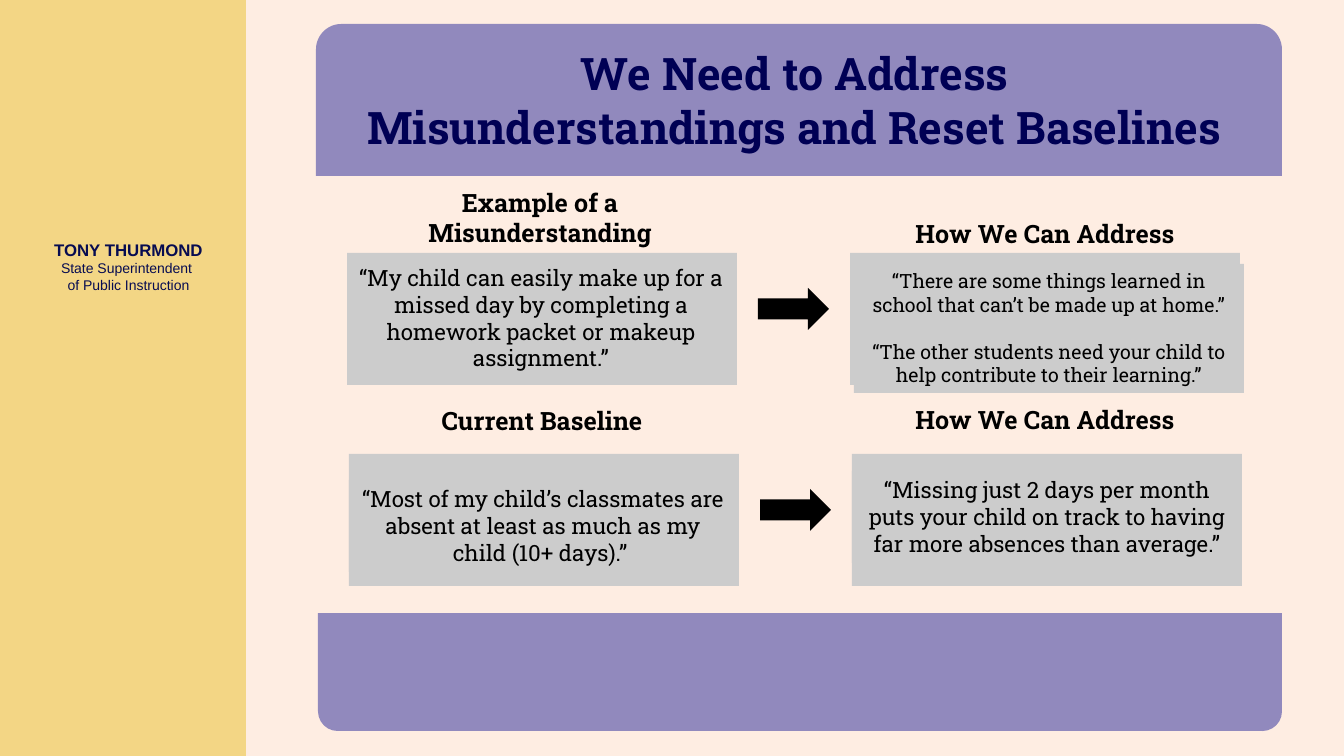
from lxml import etree
from pptx import Presentation, util as u
from pptx.dml.color import RGBColor
from pptx.enum import shapes, text
from pptx.oxml.ns import qn

# Content: lengths in px, boxes as left, top, width, height
WIDTH, HEIGHT = 1344, 756
COLORS = {"page": "FEEDE2", "sidebar": "F3D685", "band": "262699", "panel": "CCCCCC",
          "black": "000000", "title": "000054", "official": "070C51"}
SLAB = "Roboto Slab"
TITLE = ["We Need to Address ", "Misunderstandings and Reset Baselines "]
OFFICIAL = ["TONY THURMOND\vState Superintendent \vof Public Instruction"]
PANEL_W, PANEL_H = 390, 132
# heading, heading box, panel corner, quote box, quote size, quotes
CARDS = [
    ("Example of a Misunderstanding", (345, 182, 390, 72), (347, 253), (347, 259, 388, 119), 16,
     ["“My child can easily make up for a missed day by completing a homework packet "
      "or makeup assignment.”"]),
    ("How We Can Address", (850, 213, 390, 40), (850, 253), (854, 264, 390, 129), 14,
     ["“There are some things learned in school that can’t be made up at home.”",
      "“The other students need your child to help contribute to their learning.”"]),
    ("Current Baseline", (347, 400, 390, 40), (349, 454), (349, 480, 388, 92), 16,
     ["“Most of my child’s classmates are absent at least as much as my child (10+ days).” "]),
    ("How We Can Address", (850, 399, 390, 40), (852, 454), (852, 471, 390, 92), 16,
     ["“Missing just 2 days per month puts your child on track to having far more "
      "absences than average.”"]),
]
ARROWS = [(758, 288, 71, 42), (760, 489, 71, 42)]

prs = Presentation()
SCALE = u.Inches(1) / 100.8


def px(*lengths):
    return [round(length * SCALE) for length in lengths]


prs.slide_width, prs.slide_height = px(WIDTH, HEIGHT)
slide = prs.slides.add_slide(prs.slide_layouts[6])


def add_block(kind, box, color, opacity=None):
    block = slide.shapes.add_shape(kind, *px(*box))
    block.shadow.inherit = False
    block.fill.solid()
    block.fill.fore_color.rgb = RGBColor.from_string(COLORS[color])
    block.line.fill.background()
    if opacity:
        tint = block.fill._xPr.find(".//" + qn("a:srgbClr"))
        etree.SubElement(tint, qn("a:alpha")).set("val", str(opacity * 1000))
    return block


def write(holder, lines, size, color="black", font=SLAB, bold=False, gap=0,
          anchor=text.MSO_ANCHOR.TOP):
    frame = holder.text_frame
    frame.word_wrap = True
    frame.vertical_anchor = anchor
    frame.text = "\n".join(lines)
    for index, paragraph in enumerate(frame.paragraphs):
        paragraph.alignment = text.PP_ALIGN.CENTER
        if index and gap:
            paragraph.space_before = u.Pt(gap)
        for run in paragraph.runs:
            run.font.size, run.font.name, run.font.bold = u.Pt(size), font, bold
            run.font.color.rgb = RGBColor.from_string(COLORS[color])
    return frame


def add_text(box, *args, **kwargs):
    return write(slide.shapes.add_textbox(*px(*box)), *args, **kwargs)


RECT = shapes.MSO_SHAPE.RECTANGLE
BAND = shapes.MSO_SHAPE.ROUND_2_SAME_RECTANGLE

# Page and sidebar
add_block(RECT, (0, 0, WIDTH, HEIGHT), "page")
add_block(RECT, (0, 0, 246, HEIGHT), "sidebar")
official = add_text((35, 228, 187, 77), OFFICIAL, 10, "official", "Arial",
                    anchor=text.MSO_ANCHOR.MIDDLE)
official_name = official.paragraphs[0].runs[0]
official_name.font.size, official_name.font.bold = u.Pt(12), True

# Bands and title
footer = add_block(BAND, (318, 613, 964, 118), "band", 50)
footer.rotation = 180
add_block(BAND, (316, 24, 966, 152), "band", 50)
add_text((318, 41, 964, 119), TITLE, 32, "title", bold=True)

# Cards
for heading, heading_box, corner, quote_box, size, quotes in CARDS:
    add_block(RECT, (*corner, PANEL_W, PANEL_H), "panel")
    write(add_block(RECT, quote_box, "panel"), quotes, size, gap=17)
    add_text(heading_box, [heading], 18, bold=True)

# Arrows
for arrow_box in ARROWS:
    add_block(shapes.MSO_SHAPE.RIGHT_ARROW, arrow_box, "black")

prs.save("out.pptx")
